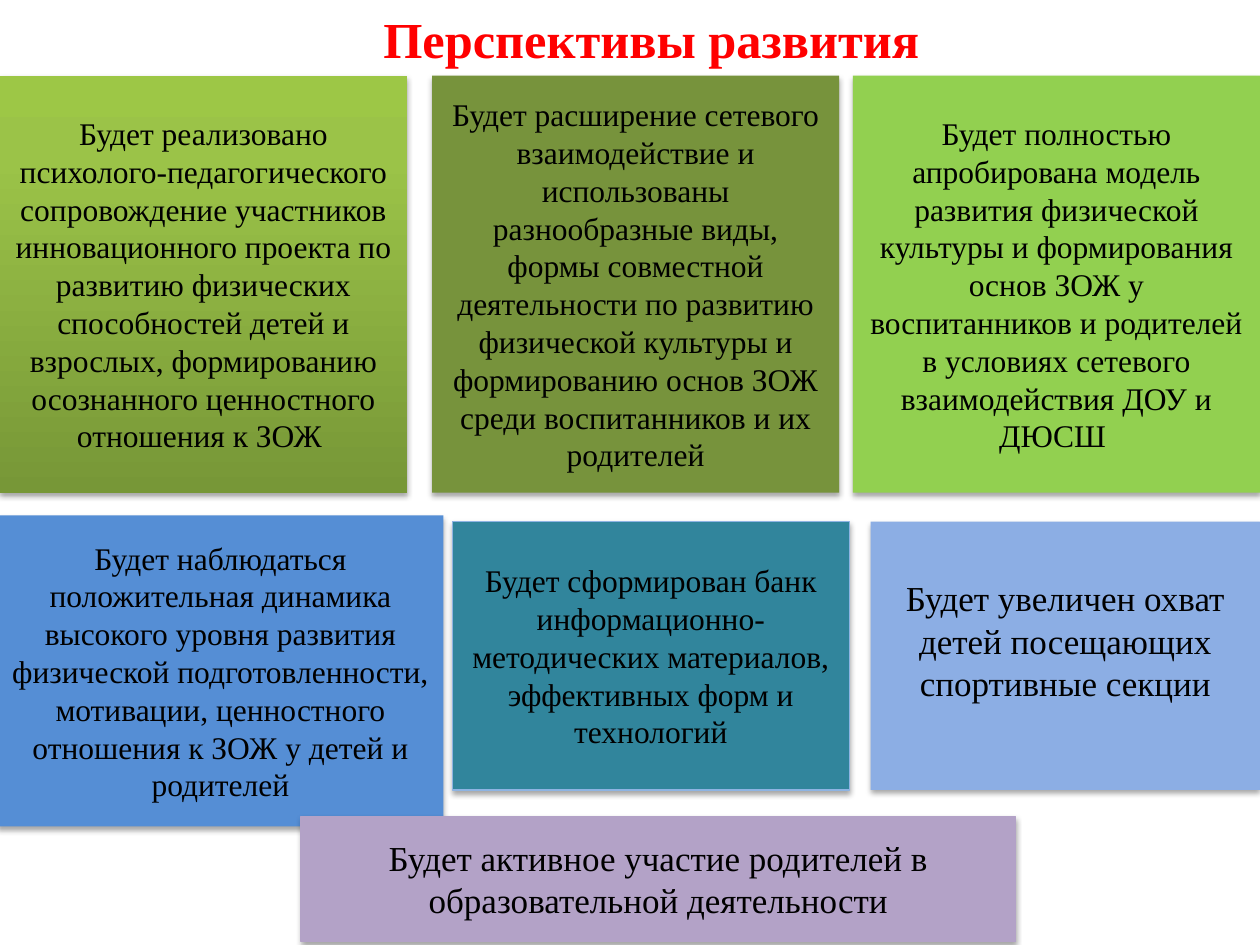
import copy

import pptx
import pptx.dml.color
import pptx.enum.shapes
import pptx.enum.text
import pptx.oxml
import pptx.oxml.ns
import pptx.util

Inches = pptx.util.Inches
Pt = pptx.util.Pt


def rgb(value):
    return pptx.dml.color.RGBColor.from_string(value)


class SlideBuilder:
    font = "Times New Roman"
    ink = "000000"
    accent = "FF0000"
    shadow = (
        f'<a:effectLst {pptx.oxml.ns.nsdecls("a")}>'
        f'<a:outerShdw blurRad="{Pt(3.1)}" dist="{Pt(1.8)}" dir="5400000" rotWithShape="0">'
        '<a:srgbClr val="000000"><a:alpha val="35000"/></a:srgbClr>'
        "</a:outerShdw></a:effectLst>"
    )

    def __init__(self, slide):
        self.slide = slide

    def set_text(self, sp, text, size, color, bold=False):
        tf = sp.text_frame
        tf.word_wrap = True
        tf.vertical_anchor = pptx.enum.text.MSO_ANCHOR.MIDDLE
        tf.text = text
        p = tf.paragraphs[0]
        p.alignment = pptx.enum.text.PP_ALIGN.CENTER
        for r in p.runs:
            r.font.name = self.font
            r.font.size = Pt(size)
            r.font.bold = bold
            r.font.color.rgb = rgb(color)

    def title(self, box, text):
        sp = self.slide.shapes.add_textbox(*map(Inches, box))
        self.set_text(sp, text, 28.8, self.accent, bold=True)

    def card(self, box, text, fill, size=18, line=None):
        sp = self.slide.shapes.add_shape(
            pptx.enum.shapes.MSO_SHAPE.RECTANGLE, *map(Inches, box)
        )
        sp.fill.solid()
        sp.fill.fore_color.rgb = rgb(fill)
        if line:
            sp.line.color.rgb = rgb(line)
            sp.line.width = Pt(0.75)
        else:
            sp.line.fill.background()
        sp._element.spPr.append(pptx.oxml.parse_xml(self.shadow))
        self.set_text(sp, text, size, self.ink)
        return sp

    def gradient(self, sp, stops, angle):
        sp.fill.gradient()
        sp.fill.gradient_angle = angle
        first = sp._element.spPr.xpath("./a:gradFill/a:gsLst/a:gs")[0]
        for _ in stops[2:]:
            first.addnext(copy.deepcopy(first))
        for stop, (position, color) in zip(sp.fill.gradient_stops, stops):
            stop.position = position
            stop.color.rgb = rgb(color)


def main():
    prs = pptx.Presentation()
    prs.slide_width = Inches(10)
    prs.slide_height = Inches(7.5)
    s = SlideBuilder(prs.slides.add_slide(prs.slide_layouts[6]))

    s.title((0.67, 0, 9, 0.61), "Перспективы развития")

    top, width, height = 0.6, 3.23, 3.31
    support = s.card(
        (0, top, width, height),
        "Будет реализовано психолого-педагогического сопровождение участников "
        "инновационного проекта по развитию физических способностей детей и "
        "взрослых, формированию осознанного ценностного отношения к ЗОЖ ",
        "9BC348",
    )
    s.gradient(support, [(0, "779737"), (0.8, "9BC348"), (1, "9DC746")], 90)
    s.card(
        (-0.02, 4.09, 3.54, 2.47),
        "Будет наблюдаться положительная динамика высокого уровня развития "
        "физической подготовленности, мотивации, ценностного отношения к ЗОЖ "
        "у детей и родителей",
        "558ED5",
    )
    s.card(
        (10 - width, top, width, height),
        "Будет полностью апробирована модель развития физической культуры и "
        "формирования основ ЗОЖ у воспитанников и родителей в условиях "
        "сетевого взаимодействия ДОУ и ДЮСШ ",
        "92D050",
    )
    s.card(
        (3.43, top, width, height),
        "Будет расширение сетевого взаимодействие и использованы разнообразные "
        "виды, формы совместной деятельности по развитию физической культуры и "
        "формированию основ ЗОЖ среди воспитанников и их родителей",
        "77933C",
    )

    top, height = 4.14, 2.13
    s.card(
        (3.59, top, 3.15, height),
        "Будет сформирован банк информационно-методических материалов, "
        "эффективных форм и технологий",
        "31859C",
        line="8EB4E3",
    )
    sections = s.card(
        (6.91, top, 3.09, height),
        "Будет увеличен охват детей посещающих спортивные секции",
        "8CAEE4",
        size=20,
    )
    sections.text_frame.margin_bottom = Inches(0.3)
    s.card(
        (2.39, 6.48, 5.67, 0.99),
        "Будет активное участие родителей в образовательной деятельности",
        "B3A2C7",
        size=20,
        line="B3A2C7",
    )

    prs.save("out.pptx")


if __name__ == "__main__":
    main()
